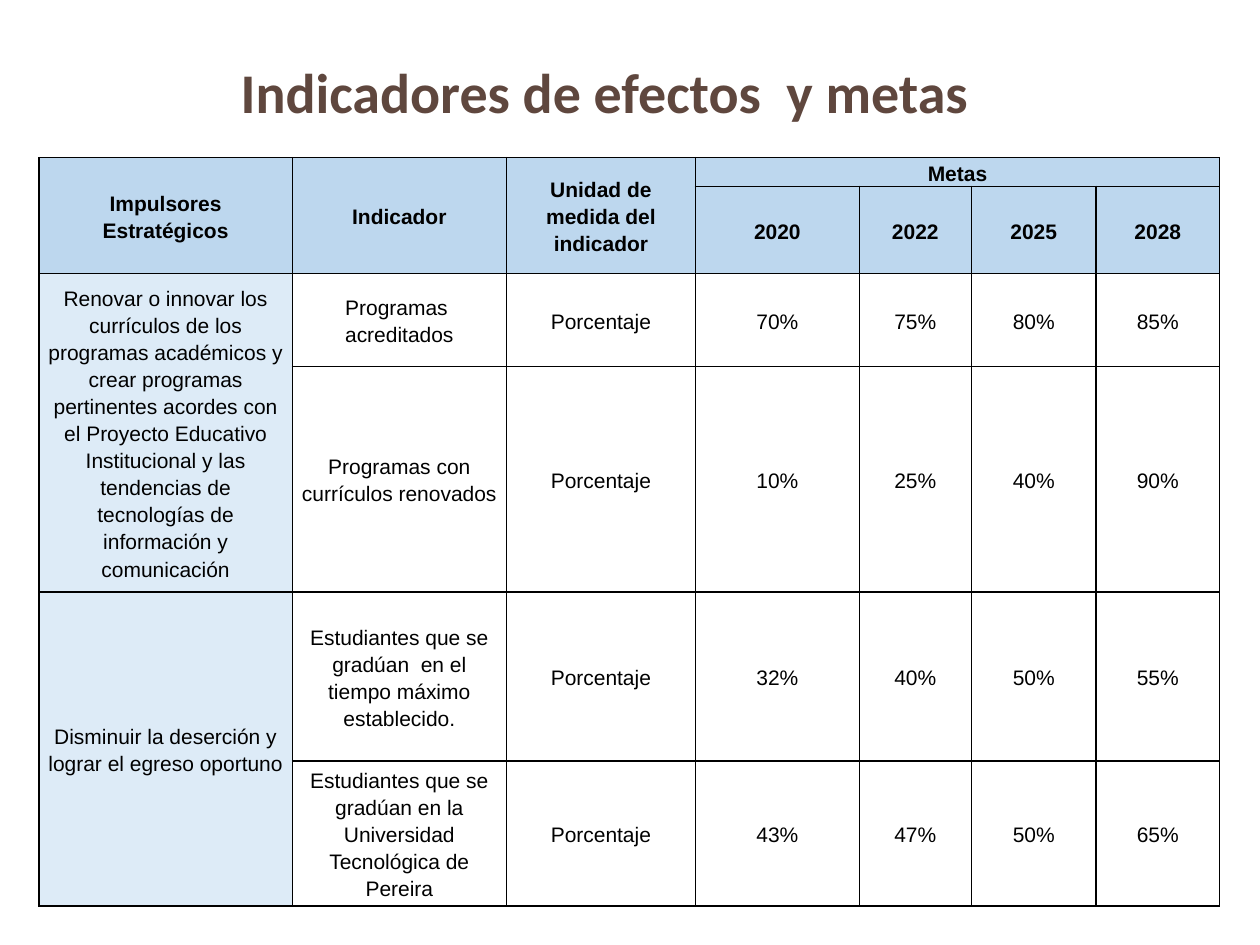
import pptx
import pptx.dml.color
import pptx.enum.text
import pptx.oxml
import pptx.oxml.ns
import pptx.util

Inches = pptx.util.Inches
RGBColor = pptx.dml.color.RGBColor
Align = pptx.enum.text.PP_ALIGN
Anchor = pptx.enum.text.MSO_ANCHOR

BROWN = RGBColor(0x5F, 0x47, 0x3E)
BLACK = RGBColor(0, 0, 0)
WHITE = RGBColor(255, 255, 255)
HEADER_BLUE = RGBColor(0xBD, 0xD7, 0xEE)
DRIVER_BLUE = RGBColor(0xDD, 0xEB, 0xF7)

COLUMN_WIDTHS = [2.01, 1.7, 1.5, 1.3, 0.89, 0.99, 0.98]
ROW_HEIGHTS = [0.23, 0.69, 0.74, 1.79, 1.34, 1.15]
HEADER_ROWS = 2

GOALS = [
    ["Impulsores Estratégicos", "Indicador", "Unidad de medida del indicador",
     "Metas", "", "", ""],
    ["", "", "", "2020", "2022", "2025", "2028"],
    ["Renovar o innovar los currículos de los programas académicos y crear "
     "programas pertinentes acordes con el Proyecto Educativo Institucional y "
     "las tendencias de tecnologías de información y comunicación",
     "Programas  acreditados", "Porcentaje", "70%", "75%", "80%", "85%"],
    ["", "Programas con currículos renovados", "Porcentaje",
     "10%", "25%", "40%", "90%"],
    ["Disminuir la deserción y lograr el egreso oportuno",
     "Estudiantes que se gradúan  en el tiempo máximo establecido.",
     "Porcentaje", "32%", "40%", "50%", "55%"],
    ["", "Estudiantes que se gradúan en la Universidad Tecnológica de Pereira",
     "Porcentaje", "43%", "47%", "50%", "65%"],
]

# First and last cell of each merged area, as (row, column)
MERGES = [((0, column), (1, column)) for column in range(3)]
MERGES += [((0, 3), (0, 6)), ((2, 0), (3, 0)), ((4, 0), (5, 0))]


def write_text(frame, text, font="Arial", size=12, color=BLACK, bold=False,
               align=Align.CENTER, line_spacing=1.0):
    frame.word_wrap = True
    paragraph = frame.paragraphs[0]
    paragraph.alignment = align
    paragraph.line_spacing = line_spacing
    run = paragraph.add_run()
    run.text = text
    run.font.name = font
    run.font.size = pptx.util.Pt(size)
    run.font.bold = bold
    run.font.color.rgb = color


class GoalSlide:
    def __init__(self, deck):
        self.slide = deck.slides.add_slide(deck.slide_layouts[5])
        self.border_color = BLACK
        self.border_width = pptx.util.Pt(1)

    def title(self, text, left, top, width, height):
        heading = self.slide.shapes.title
        heading.left, heading.top = Inches(left), Inches(top)
        heading.width, heading.height = Inches(width), Inches(height)
        heading.text_frame.vertical_anchor = Anchor.TOP
        write_text(heading.text_frame, text, font="Calibri", size=32,
                   color=BROWN, bold=True, align=Align.LEFT)

    def border(self, cell):
        properties = cell._tc.get_or_add_tcPr()
        for side in ("lnL", "lnR", "lnT", "lnB"):
            properties.append(pptx.oxml.parse_xml(
                f'<a:{side} {pptx.oxml.ns.nsdecls("a")} w="{self.border_width}">'
                f'<a:solidFill><a:srgbClr val="{self.border_color}"/></a:solidFill>'
                f'</a:{side}>'))

    def cell(self, cell, text, fill, bold):
        self.border(cell)
        cell.fill.solid()
        cell.fill.fore_color.rgb = fill
        cell.vertical_anchor = Anchor.MIDDLE
        cell.margin_left = cell.margin_right = Inches(0.05)
        cell.margin_top = cell.margin_bottom = 0
        if text:
            write_text(cell.text_frame, text, bold=bold, line_spacing=1.15)

    def table(self, rows, left, top):
        grid = self.slide.shapes.add_table(
            len(rows), len(COLUMN_WIDTHS), Inches(left), Inches(top),
            Inches(sum(COLUMN_WIDTHS)), Inches(sum(ROW_HEIGHTS))).table
        grid.first_row = grid.horz_banding = False
        for column, width in zip(grid.columns, COLUMN_WIDTHS):
            column.width = Inches(width)
        for row, height in zip(grid.rows, ROW_HEIGHTS):
            row.height = Inches(height)
        for first, last in MERGES:
            grid.cell(*first).merge(grid.cell(*last))
        for r, row in enumerate(rows):
            for c, text in enumerate(row):
                is_header = r < HEADER_ROWS
                body_fill = DRIVER_BLUE if c == 0 else WHITE
                self.cell(grid.cell(r, c), text,
                          HEADER_BLUE if is_header else body_fill, is_header)


def main():
    deck = pptx.Presentation()
    deck.slide_width, deck.slide_height = Inches(10), Inches(7.5)
    goals = GoalSlide(deck)
    goals.title("Indicadores de efectos  y metas", 1.81, 0.41, 7.56, 0.64)
    goals.table(GOALS, 0.31, 1.25)
    deck.save("out.pptx")


if __name__ == "__main__":
    main()
